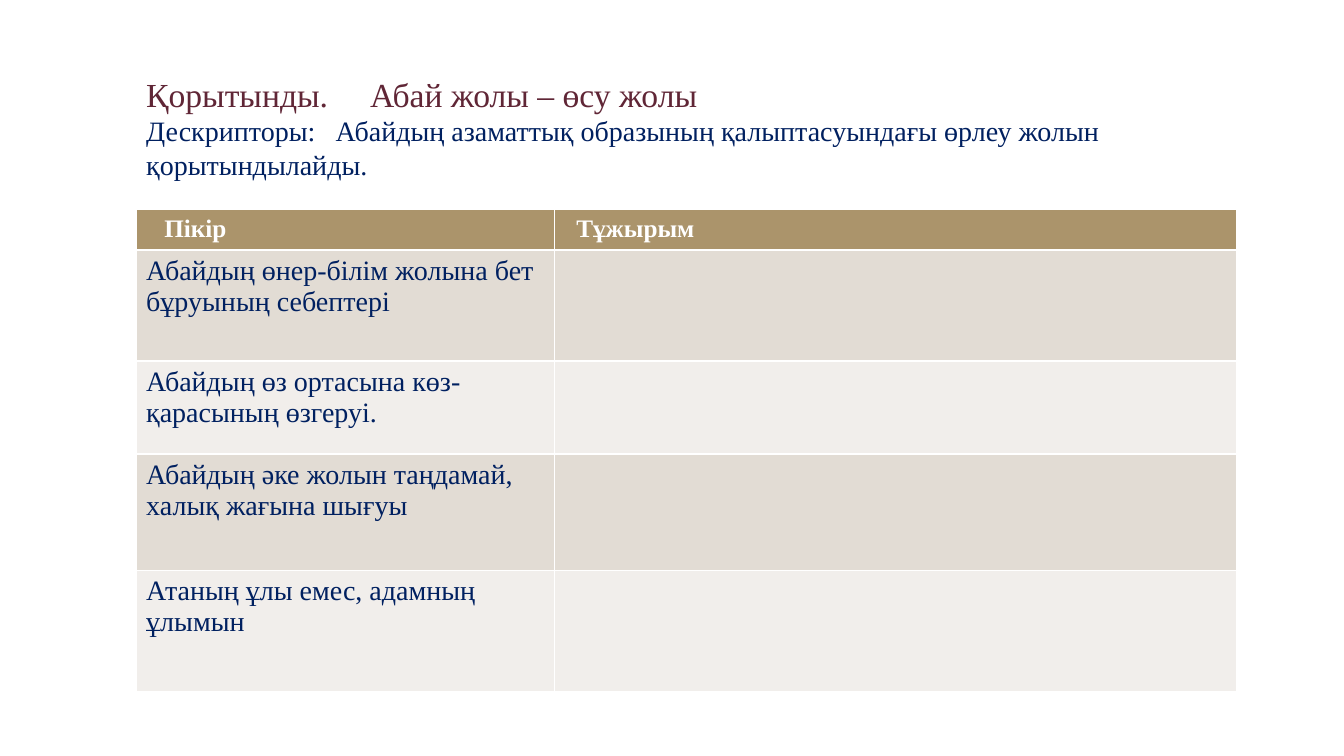
from lxml.etree import SubElement
from pptx import Presentation
from pptx.dml.color import RGBColor
from pptx.enum.text import MSO_ANCHOR, MSO_AUTO_SIZE, PP_ALIGN
from pptx.oxml.ns import qn
from pptx.util import Inches, Pt

WINE = RGBColor(0x60, 0x26, 0x36)
NAVY = RGBColor(0x00, 0x20, 0x60)
WHITE = RGBColor(0xFF, 0xFF, 0xFF)
BRONZE = RGBColor(0xAB, 0x94, 0x6B)
SAND = RGBColor(0xE2, 0xDC, 0xD4)
CREAM = RGBColor(0xF1, 0xEE, 0xEB)
FONT = "Times New Roman"

HEADING = [
    ("Қорытынды.\tАбай жолы – өсу жолы", 24, WINE, 2.22),
    ("Дескрипторы:\tАбайдың азаматтық образының қалыптасуындағы өрлеу жолын "
     "қорытындылайды.", 20, NAVY, 1.88),
]
COLUMNS = [("Пікір", 0.38, 0.28), ("Тұжырым", 0.62, 0.22)]
HEADER_HEIGHT = 0.39
OPINIONS = [
    ("Абайдың өнер-білім жолына бет бұруының себептері", 1.1),
    ("Абайдың өз ортасына көз- қарасының өзгеруі.", 0.92),
    ("Абайдың әке жолын таңдамай, халық жағына шығуы", 1.15),
    ("Атаның ұлы емес, адамның ұлымын", 1.2),
]


def style(paragraph, size, color, bold=False):
    """Set the font of a whole paragraph."""
    font = paragraph.font
    font.name, font.size, font.bold = FONT, Pt(size), bold
    font.color.rgb = color


def add_tab_stop(paragraph, position):
    """Give the paragraph one left tab stop."""
    tabs = SubElement(paragraph._p.get_or_add_pPr(), qn("a:tabLst"))
    SubElement(tabs, qn("a:tab"), pos=str(Inches(position)), algn="l")


def fill_heading(slide, left, top, width, height):
    """Place the title and descriptor lines in the title placeholder."""
    heading = slide.shapes.title
    heading.left, heading.top = left, top
    heading.width, heading.height = width, height
    frame = heading.text_frame
    frame.word_wrap = True
    frame.auto_size = MSO_AUTO_SIZE.SHAPE_TO_FIT_TEXT
    frame.vertical_anchor = MSO_ANCHOR.TOP
    frame.text = "\n".join(line for line, *_ in HEADING)
    for paragraph, (_, size, color, stop) in zip(frame.paragraphs, HEADING):
        paragraph.alignment = PP_ALIGN.LEFT
        add_tab_stop(paragraph, stop)
        style(paragraph, size, color)


def fill_cell(cell, color):
    """Paint a cell in one colour."""
    cell.fill.solid()
    cell.fill.fore_color.rgb = color


def add_opinions(slide, left, top, width, height):
    """Build the table of opinions with an empty conclusion column."""
    table = slide.shapes.add_table(
        len(OPINIONS) + 1, len(COLUMNS), left, top, width, height).table
    row_heights = [HEADER_HEIGHT] + [share for _, share in OPINIONS]
    for row, share in zip(table.rows, row_heights):
        row.height = int(height * share / sum(row_heights))

    for index, (label, share, indent) in enumerate(COLUMNS):
        table.columns[index].width = int(width * share)
        header = table.cell(0, index)
        header.text = label
        header.margin_left = Inches(indent)
        style(header.text_frame.paragraphs[0], 18, WHITE, True)
        fill_cell(header, BRONZE)

    for index, (opinion, _) in enumerate(OPINIONS, 1):
        table.cell(index, 0).text = opinion
        style(table.cell(index, 0).text_frame.paragraphs[0], 20, NAVY)
        for cell in table.rows[index].cells:
            fill_cell(cell, SAND if index % 2 else CREAM)


def main():
    """Create the one-slide presentation."""
    deck = Presentation()
    deck.slide_width, deck.slide_height = Inches(13.33), Inches(7.5)
    slide = deck.slides.add_slide(deck.slide_layouts[5])
    left, width = Inches(1.35), Inches(10.91)
    fill_heading(slide, left, Inches(0.68), width, Inches(1.18))
    add_opinions(slide, left, Inches(2.08), width, Inches(4.77))
    deck.save("out.pptx")


if __name__ == "__main__":
    main()
